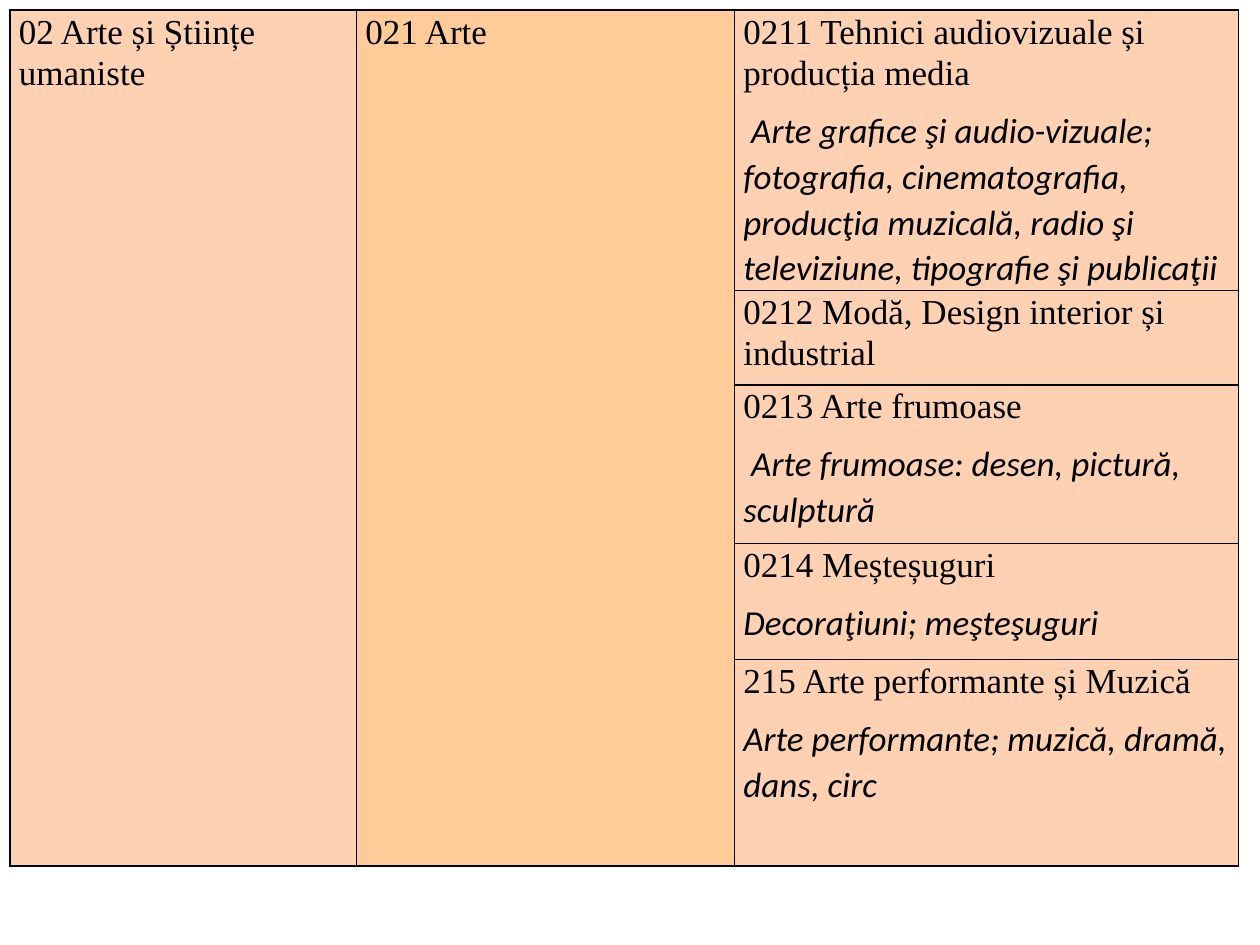
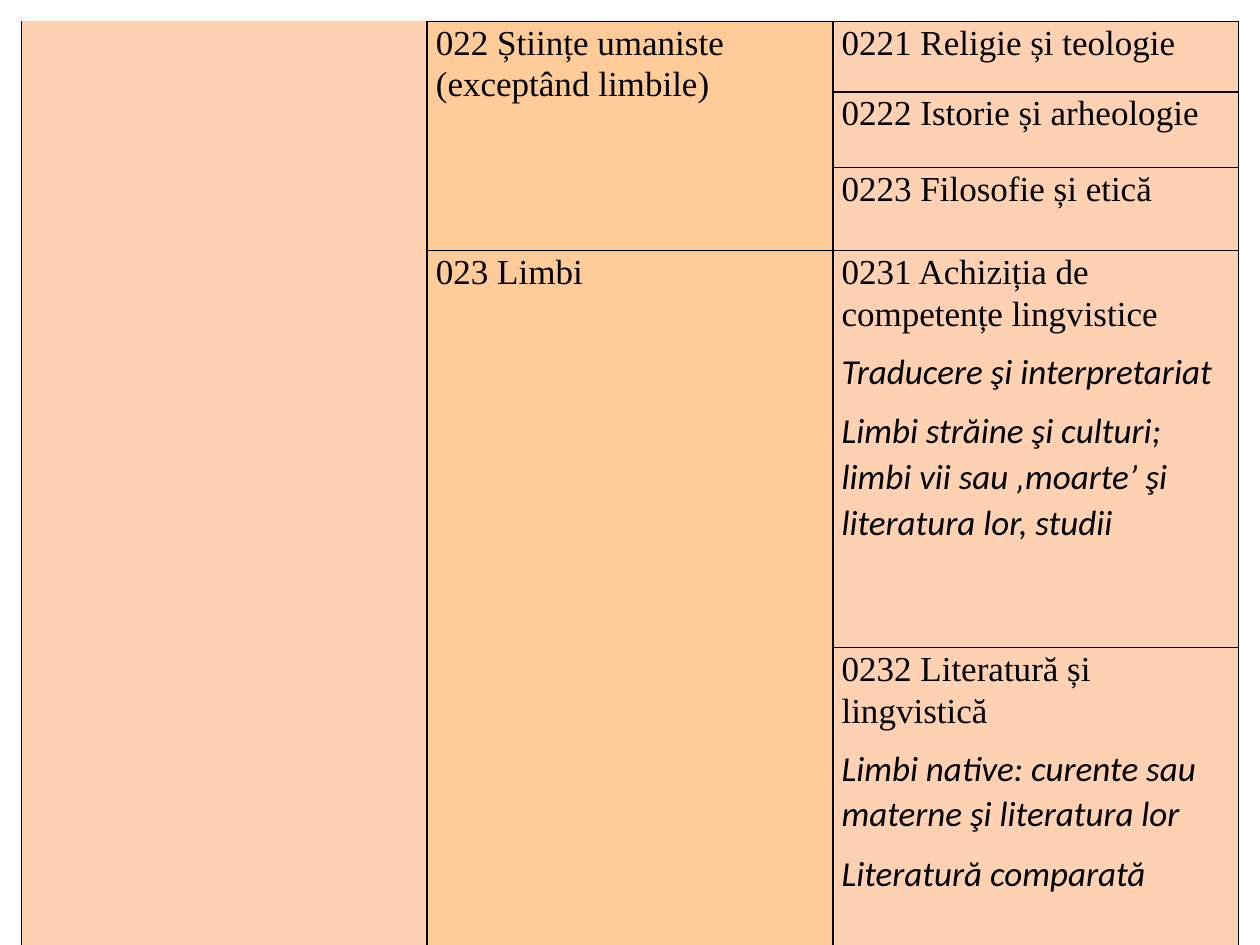
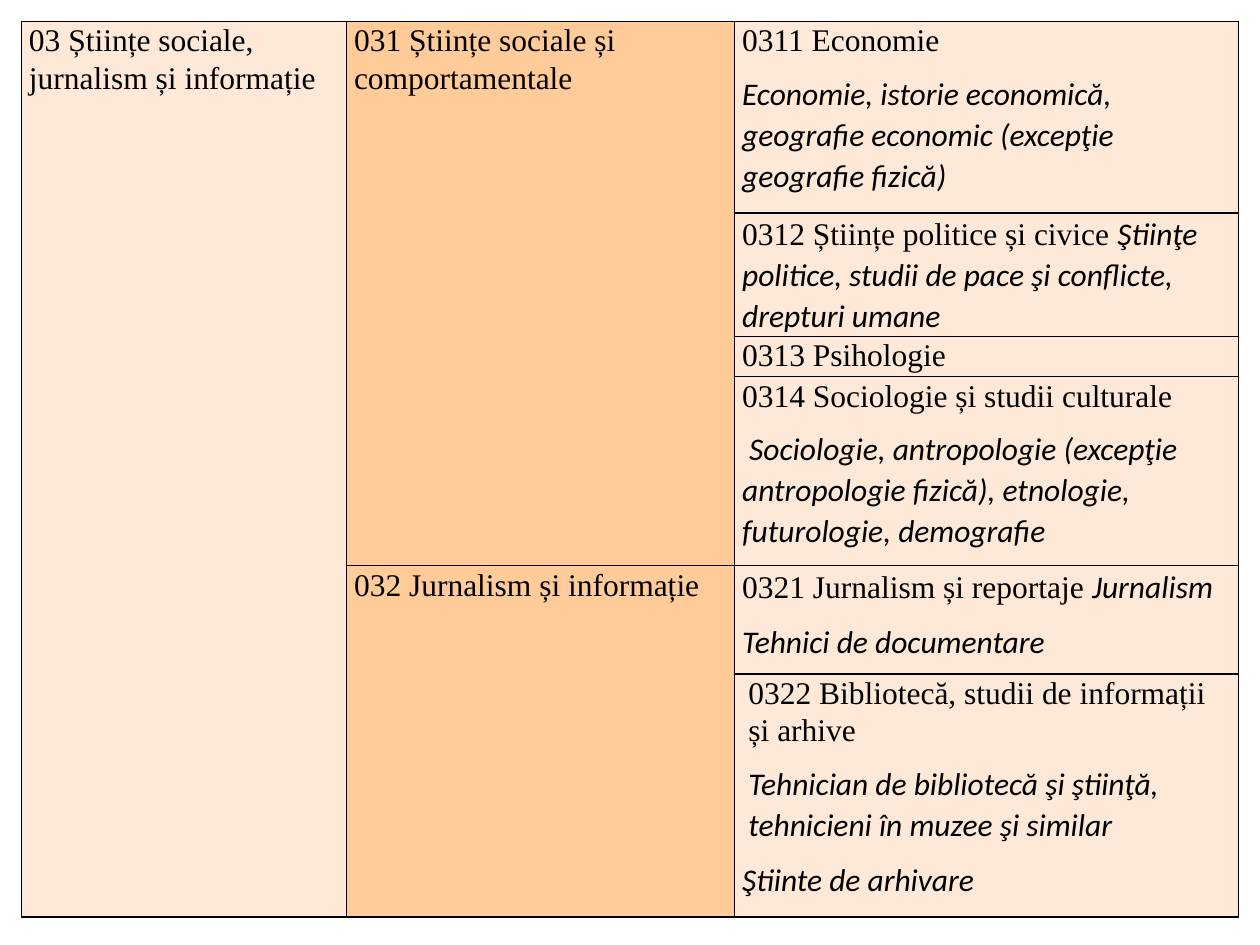
from dataclasses import dataclass

from lxml.etree import SubElement
from pptx import Presentation
from pptx.dml.color import RGBColor
from pptx.oxml import parse_xml
from pptx.oxml.ns import nsdecls, qn
from pptx.util import Inches, Pt

BLACK = RGBColor(0x00, 0x00, 0x00)
PEACH = RGBColor(0xFD, 0xD1, 0xB1)
ORANGE = RGBColor(0xFF, 0xCC, 0x99)
CREAM = RGBColor(0xFE, 0xE8, 0xD8)

CODE_FONT = "Times New Roman"
NOTE_FONT = "Calibri"
LINE_WIDTH = Pt(1)
ALL_SIDES = "LRTB"
BLANK_LAYOUT = 6


@dataclass
class Span:
    text: str
    is_note: bool = False


@dataclass
class Para:
    spans: list
    indent: float = 0


@dataclass
class Entry:
    paras: list
    rows: int = 1
    sides: str = ALL_SIDES


@dataclass
class Style:
    fills: list
    size: int
    margin: float


def code(text, indent=0):
    return Para([Span(text)], indent)


def note(text, indent=0):
    return Para([Span(text, True)], indent)


def code_with_note(code_text, note_text):
    return Para([Span(code_text), Span(note_text, True)])


def draw_borders(cell, sides):
    properties = cell._tc.get_or_add_tcPr()
    for position, side in enumerate(ALL_SIDES):
        line = parse_xml(f'<a:ln{side} {nsdecls("a")} w="{LINE_WIDTH}"/>')
        if side in sides:
            fill = SubElement(line, qn("a:solidFill"))
            SubElement(fill, qn("a:srgbClr")).set("val", str(BLACK))
        else:
            SubElement(line, qn("a:noFill"))
        properties.insert(position, line)


def write_paras(cell, paras, style):
    frame = cell.text_frame
    for index, content in enumerate(paras):
        para = frame.paragraphs[0] if index == 0 else frame.add_paragraph()
        para.line_spacing = 1.07
        para.space_after = Pt(8)
        if content.indent:
            para._p.get_or_add_pPr().set("marL", str(Inches(content.indent)))
        for span in content.spans:
            run = para.add_run()
            run.text = span.text
            run.font.name = NOTE_FONT if span.is_note else CODE_FONT
            run.font.italic = span.is_note
            run.font.size = Pt(style.size)
            run.font.color.rgb = BLACK


def fill_entry(table, column, first_row, entry, style):
    last_row = first_row + entry.rows - 1
    origin = table.cell(first_row, column)
    if entry.rows > 1:
        origin.merge(table.cell(last_row, column))
    for row in range(first_row, last_row + 1):
        cell = table.cell(row, column)
        cell.margin_left = cell.margin_right = Inches(style.margin)
        cell.margin_top = cell.margin_bottom = 0
        cell.fill.solid()
        cell.fill.fore_color.rgb = style.fills[column]
        sides = entry.sides
        if row > first_row:
            sides = sides.replace("T", "")
            if row < last_row:
                sides = sides.replace("B", "")
        draw_borders(cell, sides)
    write_paras(origin, entry.paras, style)


def add_field_table(deck, offset, widths, heights, columns, style):
    page = deck.slides.add_slide(deck.slide_layouts[BLANK_LAYOUT])
    frame = page.shapes.add_table(
        len(heights), len(widths), Inches(offset), Inches(offset),
        Inches(sum(widths)), Inches(sum(heights)))
    table = frame.table
    table.first_row = table.horz_banding = False
    for column, width in zip(table.columns, widths):
        column.width = Inches(width)
    for row, height in zip(table.rows, heights):
        row.height = Inches(height)
    for column, entries in enumerate(columns):
        first_row = 0
        for entry in entries:
            fill_entry(table, column, first_row, entry, style)
            first_row += entry.rows


def add_arts(deck, style):
    add_field_table(
        deck, 0.08, [2.75, 3, 4], [2.17, 0.75, 1.26, 0.92, 1.64],
        [
            [Entry([code("02 Arte și Științe umaniste")], 5)],
            [Entry([code("021 Arte")], 5)],
            [
                Entry([code("0211 Tehnici audiovizuale și producția media"),
                       note(" Arte grafice şi audio-vizuale; fotografia, "
                            "cinematografia, producţia muzicală, radio şi "
                            "televiziune, tipografie şi publicaţii")]),
                Entry([code("0212 Modă, Design interior și industrial")]),
                Entry([code("0213 Arte frumoase"),
                       note(" Arte frumoase: desen, pictură, sculptură")]),
                Entry([code("0214 Meșteșuguri"),
                       note("Decoraţiuni; meşteşuguri")]),
                Entry([code("215 Arte performante și Muzică"),
                       note("Arte performante; muzică, dramă, dans, circ")]),
            ],
        ], style)


def add_humanities(deck, style):
    add_field_table(
        deck, 0.17, [3.22] * 3, [0.56, 0.6, 0.66, 3.15, 2.5],
        [
            [Entry([], 3, "LR"), Entry([], 2, "LRB")],
            [Entry([code("022 Științe umaniste (exceptând limbile)")], 3),
             Entry([code("023 Limbi")], 2)],
            [
                Entry([code("0221 Religie și teologie")]),
                Entry([code("0222 Istorie și arheologie")]),
                Entry([code("0223 Filosofie și etică")]),
                Entry([code("0231 Achiziția de competențe lingvistice"),
                       note("Traducere şi interpretariat"),
                       note("Limbi străine şi culturi; limbi vii sau "
                            "‚moarte’ şi literatura lor, studii")]),
                Entry([code("0232 Literatură și lingvistică"),
                       note("Limbi native: curente sau materne şi "
                            "literatura lor"),
                       note("Literatură comparată")]),
            ],
        ], style)


def add_social_sciences(deck, style):
    add_field_table(
        deck, 0.17, [2.58, 3.08, 4], [1.52, 0.96, 0.32, 1.5, 0.86, 1.93],
        [
            [Entry([code("03 Științe sociale, jurnalism și informație")],
                   4, "LRT"),
             Entry([], 2, "LRB")],
            [Entry([code("031 Științe sociale și comportamentale")], 4),
             Entry([code("032 Jurnalism și informație")], 2)],
            [
                Entry([code("0311 Economie"),
                       note("Economie, istorie economică, geografie economic "
                            "(excepţie geografie fizică)")]),
                Entry([code_with_note(
                    "0312 Științe politice și civice ",
                    "Ştiinţe politice, studii de pace şi conflicte, "
                    "drepturi umane")]),
                Entry([code("0313 Psihologie")]),
                Entry([code("0314 Sociologie și studii culturale"),
                       note(" Sociologie, antropologie (excepţie antropologie "
                            "fizică), etnologie, futurologie, demografie")]),
                Entry([code_with_note("0321 Jurnalism și reportaje ",
                                      "Jurnalism"),
                       note("Tehnici de documentare")]),
                Entry([code("0322 Bibliotecă, studii de informații și arhive",
                            0.05),
                       note("Tehnician de bibliotecă şi ştiinţă, tehnicieni "
                            "în muzee şi similar", 0.05),
                       note("Ştiinte de arhivare")]),
            ],
        ], style)


def main():
    deck = Presentation()
    deck.slide_width = Inches(10)
    deck.slide_height = Inches(7.5)
    arts_style = Style([PEACH, ORANGE, PEACH], 20, 0.07)
    social_style = Style([CREAM, ORANGE, CREAM], 18, 0.06)
    add_arts(deck, arts_style)
    add_humanities(deck, arts_style)
    add_social_sciences(deck, social_style)
    deck.save("out.pptx")


if __name__ == "__main__":
    main()
